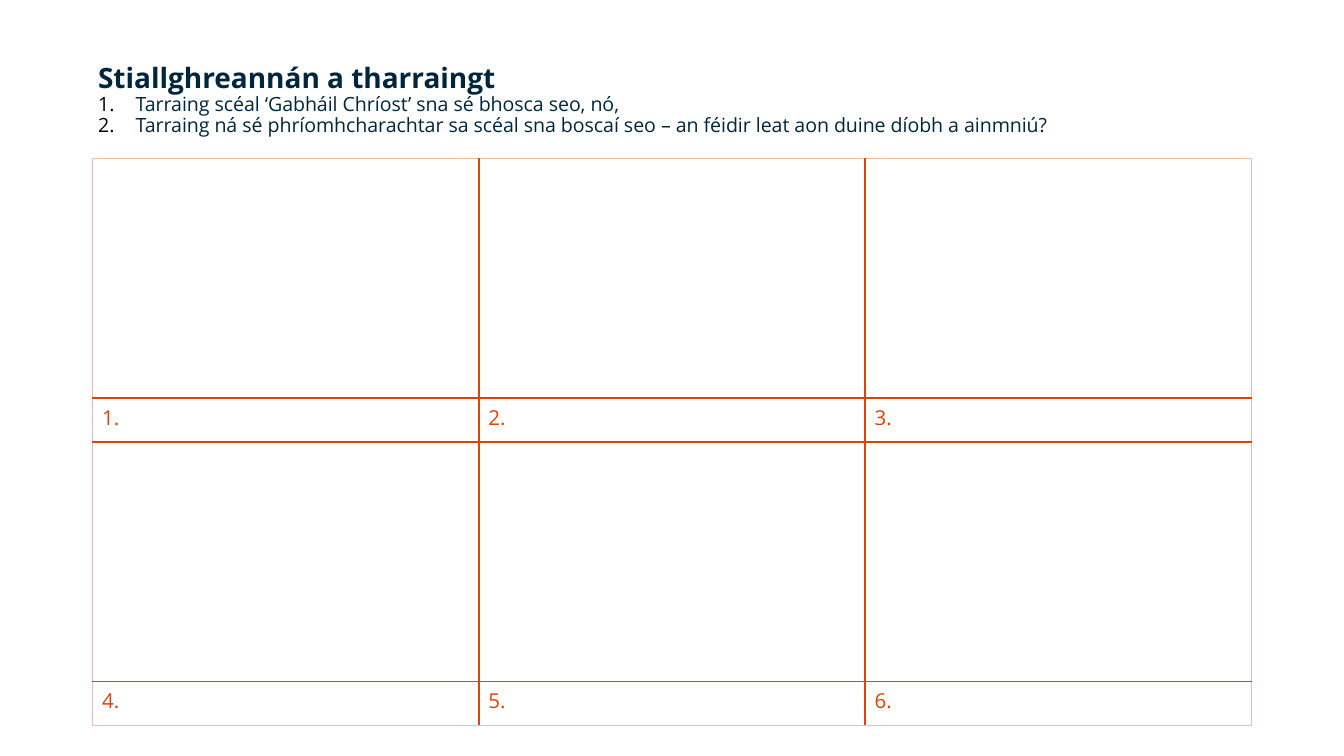
from dataclasses import dataclass

from lxml.etree import SubElement
from pptx import Presentation
from pptx.dml.color import RGBColor
from pptx.enum.text import MSO_ANCHOR, MSO_AUTO_SIZE, PP_ALIGN
from pptx.oxml.ns import qn
from pptx.util import Cm, Pt

NAVY = RGBColor(0x00, 0x26, 0x3E)
ORANGE = RGBColor(0xDC, 0x44, 0x05)
PALE_ORANGE = RGBColor(0xEF, 0xBA, 0xB0)
BLACK = RGBColor(0, 0, 0)
FONT = "Open Sans"

HEADING = "Stiallghreannán a tharraingt"
TASKS = [
    "Tarraing scéal ‘Gabháil Chríost’ sna sé bhosca seo, nó,",
    "Tarraing ná sé phríomhcharachtar sa scéal sna boscaí seo – "
    "an féidir leat aon duine díobh a ainmniú?",
]
COLUMNS, STRIPS = 3, 2
PANEL_WIDTH, DRAWING_HEIGHT, CAPTION_HEIGHT = Cm(7.3), Cm(4.52), Cm(0.84)


@dataclass(frozen=True)
class Border:
    color: RGBColor
    width: Pt


INNER = Border(ORANGE, Pt(1))
OUTER = Border(PALE_ORANGE, Pt(0.75))


def format_runs(paragraph, size: float, color: RGBColor, bold: bool = False) -> None:
    for run in paragraph.runs:
        run.font.name = FONT
        run.font.size = Pt(size)
        run.font.bold = bold
        run.font.color.rgb = color


def number_paragraph(paragraph) -> None:
    """Give a paragraph a black automatic number and a hanging indent."""
    properties = paragraph._p.get_or_add_pPr()
    properties.set("marL", str(Cm(0.71)))
    properties.set("indent", str(-Cm(0.71)))
    number_color = SubElement(properties, qn("a:buClr"))
    SubElement(number_color, qn("a:srgbClr"), val=str(BLACK))
    SubElement(properties, qn("a:buFont"), typeface=FONT)
    SubElement(properties, qn("a:buAutoNum"), type="arabicPeriod")


def add_border(cell, side: str, border: Border) -> None:
    line = SubElement(cell._tc.get_or_add_tcPr(), qn(f"a:ln{side}"), w=str(border.width))
    fill = SubElement(line, qn("a:solidFill"))
    SubElement(fill, qn("a:srgbClr"), val=str(border.color))


def format_cell(cell, row: int, column: int) -> None:
    on_edge = {
        "L": column == 0,
        "R": column == COLUMNS - 1,
        "T": row == 0,
        "B": row == 2 * STRIPS - 1,
    }
    for side, is_outer in on_edge.items():
        add_border(cell, side, OUTER if is_outer else INNER)
    cell.fill.background()
    cell.margin_left = cell.margin_right = Cm(0.18)
    cell.margin_top = cell.margin_bottom = Cm(0.1)


def add_comic_strip(slide) -> None:
    grid = slide.shapes.add_table(
        2 * STRIPS, COLUMNS, Cm(1.75), Cm(3), COLUMNS * PANEL_WIDTH,
        STRIPS * (DRAWING_HEIGHT + CAPTION_HEIGHT),
    ).table
    grid.first_row = grid.horz_banding = False
    for column in grid.columns:
        column.width = PANEL_WIDTH
    for row_index, row in enumerate(grid.rows):
        is_caption = row_index % 2 == 1
        row.height = CAPTION_HEIGHT if is_caption else DRAWING_HEIGHT
        for column_index, cell in enumerate(row.cells):
            format_cell(cell, row_index, column_index)
            if is_caption:
                panel_number = row_index // 2 * COLUMNS + column_index + 1
                cell.text_frame.text = f"{panel_number}."
                format_runs(cell.text_frame.paragraphs[0], 11, ORANGE)


def add_instructions(slide) -> None:
    instructions = slide.shapes.title
    instructions.left, instructions.top = Cm(1.6), Cm(1.09)
    instructions.width, instructions.height = Cm(22.05), Cm(1.8)
    frame = instructions.text_frame
    frame.word_wrap = True
    frame.auto_size = MSO_AUTO_SIZE.SHAPE_TO_FIT_TEXT
    frame.vertical_anchor = MSO_ANCHOR.TOP
    frame.text = "\n".join([HEADING, *TASKS])
    for index, paragraph in enumerate(frame.paragraphs):
        paragraph.alignment = PP_ALIGN.LEFT
        paragraph.line_spacing = 0.9
        paragraph.space_before = Pt(0)
        if index == 0:
            format_runs(paragraph, 15, NAVY, bold=True)
        else:
            number_paragraph(paragraph)
            format_runs(paragraph, 10.5, NAVY)


def main() -> None:
    presentation = Presentation()
    presentation.slide_width, presentation.slide_height = Cm(25.4), Cm(14.29)
    slide = presentation.slides.add_slide(presentation.slide_layouts[5])

    # Six drawing panels with numbered captions
    add_comic_strip(slide)

    # Heading and the two tasks
    add_instructions(slide)

    presentation.save("out.pptx")


if __name__ == "__main__":
    main()
